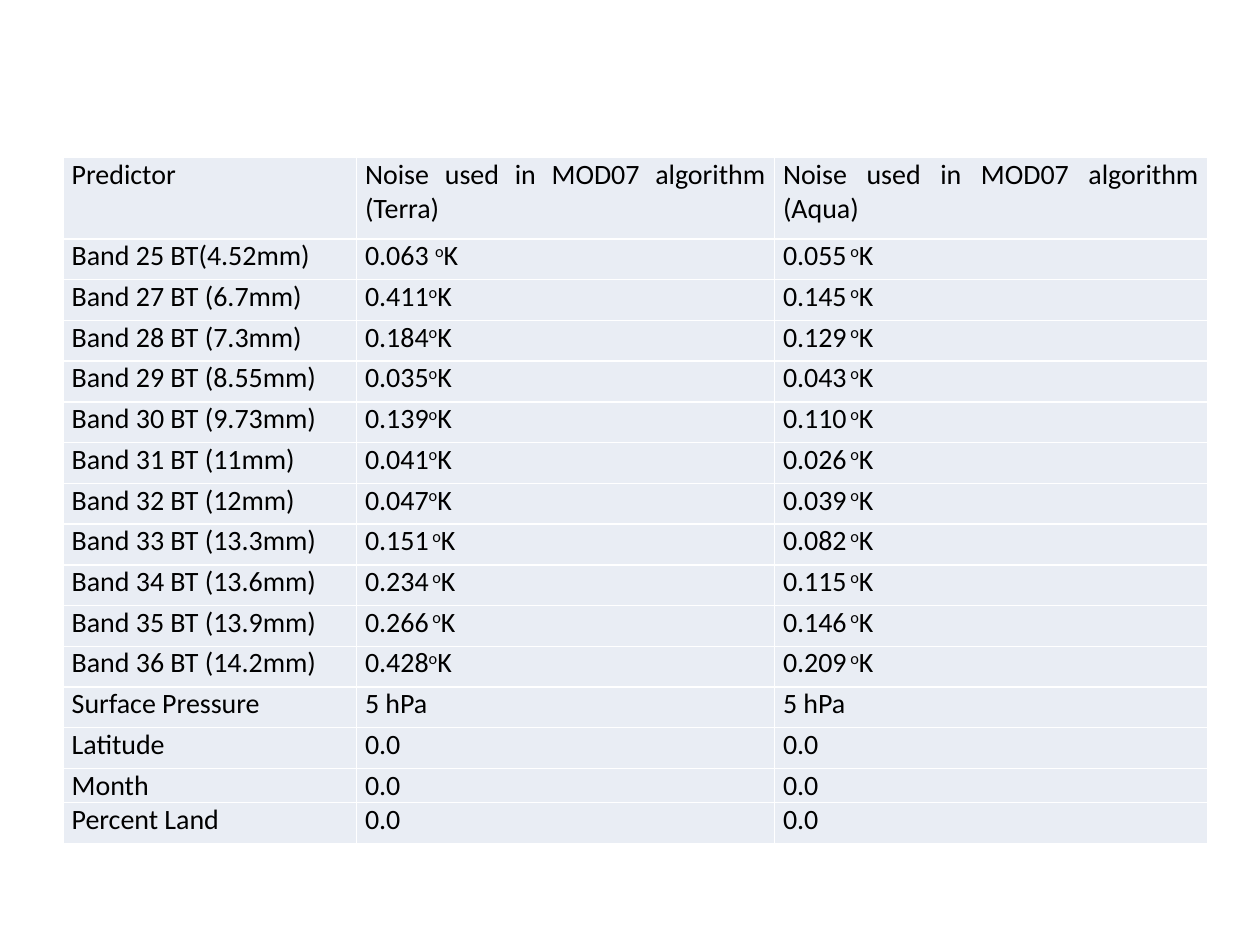
import pptx
import pptx.util
import pptx.dml.color
import pptx.enum.text
import pptx.oxml
import pptx.oxml.ns
from lxml import etree

Pt = pptx.util.Pt
RGB = pptx.dml.color.RGBColor.from_string
qn = pptx.oxml.ns.qn

COLORS = {"text": "000000", "cell": "E9EDF4", "border": "FFFFFF"}

# Text between carets is superscript
ROWS = [
    ("Predictor", "Noise used in MOD07 algorithm (Terra) ",
     "Noise used in MOD07 algorithm (Aqua)"),
    ("Band 25 BT(4.52mm)", "0.063 ^o^K", "0.055^ o^K"),
    ("Band 27 BT (6.7mm)", "0.411^o^K", "0.145^ o^K"),
    ("Band 28 BT (7.3mm)", "0.184^o^K", "0.129^ o^K"),
    ("Band 29 BT (8.55mm)", "0.035^o^K", "0.043^ o^K"),
    ("Band 30 BT (9.73mm)", "0.139^o^K", "0.110^ o^K"),
    ("Band 31 BT (11mm)", "0.041^o^K", "0.026^ o^K"),
    ("Band 32 BT (12mm)", "0.047^o^K", "0.039^ o^K"),
    ("Band 33 BT (13.3mm)", "0.151^ o^K", "0.082^ o^K"),
    ("Band 34 BT (13.6mm)", "0.234^ o^K", "0.115^ o^K"),
    ("Band 35 BT (13.9mm)", "0.266^ o^K", "0.146^ o^K"),
    ("Band 36 BT (14.2mm)", "0.428^o^K", "0.209^ o^K"),
    ("\tSurface Pressure", "5 hPa", "5 hPa"),
    ("Latitude", "0.0", "0.0"),
    ("Month", "0.0", "0.0"),
    ("Percent Land", "0.0", "0.0"),
]
COL_SHARES = (2.33, 3.32, 3.44)
HEADER_HEIGHT, ROW_HEIGHT, MONTH_HEIGHT = 46.6, 23.3, 4.3


def add_text(tf, text, size=16, font="Calibri", color="text", tab=None):
    p = tf.paragraphs[0]
    p.alignment = pptx.enum.text.PP_ALIGN.JUSTIFY
    if tab:
        tabs = etree.SubElement(p._p.get_or_add_pPr(), qn("a:tabLst"))
        etree.SubElement(tabs, qn("a:tab"), pos=str(Pt(tab)), algn="ctr")
    for i, part in enumerate(text.split("^")):
        r = p.add_run()
        r.text = part
        r.font.size = Pt(size)
        r.font.name = font
        r.font.bold = False
        r.font.color.rgb = RGB(COLORS[color])
        if i % 2:
            r.font._element.set("baseline", "30000")


def format_cell(cell):
    cell.margin_left = cell.margin_right = Pt(5)
    cell.margin_top = cell.margin_bottom = 0
    cell.fill.solid()
    cell.fill.fore_color.rgb = RGB(COLORS["cell"])
    # Borders go before the fill
    tc_pr = cell._tc.get_or_add_tcPr()
    for i, side in enumerate(("lnL", "lnR", "lnT", "lnB")):
        ln = etree.Element(qn("a:" + side), w=str(Pt(1)))
        fill = etree.SubElement(ln, qn("a:solidFill"))
        etree.SubElement(fill, qn("a:srgbClr"), val=COLORS["border"])
        tc_pr.insert(i, ln)


def add_noise_table(s, x, y, w, h):
    tbl = s.shapes.add_table(len(ROWS), len(COL_SHARES),
                             Pt(x), Pt(y), Pt(w), Pt(h)).table
    tbl.first_row = tbl.horz_banding = False
    for col, share in zip(tbl.columns, COL_SHARES):
        col.width = Pt(w * share / sum(COL_SHARES))
    heights = {"Predictor": HEADER_HEIGHT, "Month": MONTH_HEIGHT}
    for row, texts in zip(tbl.rows, ROWS):
        row.height = Pt(heights.get(texts[0], ROW_HEIGHT))
        for cell, text in zip(row.cells, texts):
            format_cell(cell)
            add_text(cell.text_frame, text, tab=48 if "\t" in text else None)


def main():
    prs = pptx.Presentation()
    prs.slide_width, prs.slide_height = Pt(720), Pt(540)
    s = prs.slides.add_slide(prs.slide_layouts[6])
    add_noise_table(s, 36, 90, 654, 392)
    prs.save("out.pptx")


if __name__ == "__main__":
    main()
